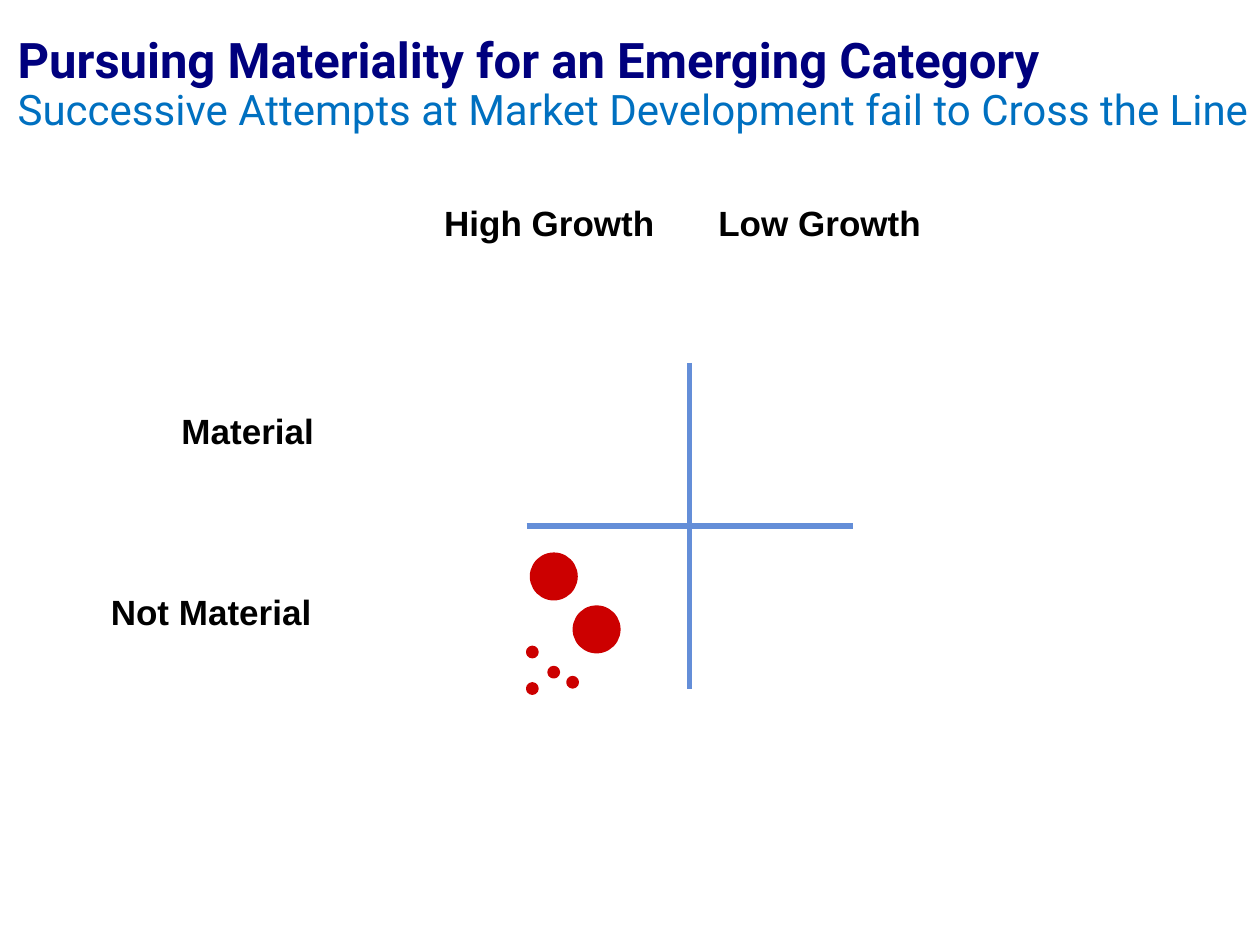
from dataclasses import dataclass

from lxml.etree import SubElement
from pptx import Presentation
from pptx.dml.color import RGBColor
from pptx.enum.shapes import MSO_CONNECTOR, MSO_SHAPE
from pptx.enum.text import MSO_ANCHOR, MSO_AUTO_SIZE, PP_ALIGN
from pptx.oxml.ns import qn
from pptx.util import Inches, Pt


@dataclass(frozen=True)
class Theme:
    title_font: str = "Roboto"
    label_font: str = "Arial"
    title: RGBColor = RGBColor(0x00, 0x00, 0x7E)
    subtitle: RGBColor = RGBColor(0x00, 0x70, 0xC0)
    label: RGBColor = RGBColor(0x00, 0x00, 0x00)
    axis: RGBColor = RGBColor(0x64, 0x8E, 0xD8)
    bubble: RGBColor = RGBColor(0xCC, 0x00, 0x00)
    title_size: Pt = Pt(28)
    subtitle_size: Pt = Pt(24)
    label_size: Pt = Pt(20)
    axis_width: Pt = Pt(3)
    bubble_line: Pt = Pt(2.25)


THEME = Theme()


def format_run(r, font, size, color, bold):
    r.font.name = font
    r.font.size = size
    r.font.color.rgb = color
    r.font.bold = bold


def add_heading(s, left, top, width, height, title, subtitle):
    sp = s.shapes.title
    sp.left, sp.top, sp.width, sp.height = map(Inches, (left, top, width, height))
    tf = sp.text_frame
    tf.word_wrap = True
    tf.auto_size = MSO_AUTO_SIZE.NONE
    tf.vertical_anchor = MSO_ANCHOR.TOP
    p = tf.paragraphs[0]
    p.text = f"{title}\v{subtitle}"
    p.alignment = PP_ALIGN.LEFT
    p.line_spacing = 0.9
    first, second = p.runs
    format_run(first, THEME.title_font, THEME.title_size, THEME.title, True)
    format_run(second, THEME.title_font, THEME.subtitle_size, THEME.subtitle, False)


def add_label(s, text, left, top, width, align):
    sp = s.shapes.add_textbox(Inches(left), Inches(top), Inches(width), Inches(0.44))
    tf = sp.text_frame
    tf.word_wrap = True
    tf.auto_size = MSO_AUTO_SIZE.SHAPE_TO_FIT_TEXT
    p = tf.paragraphs[0]
    p.text = text
    p.alignment = align
    format_run(p.runs[0], THEME.label_font, THEME.label_size, THEME.label, True)


def add_axis(s, x1, y1, x2, y2):
    line = s.shapes.add_connector(MSO_CONNECTOR.STRAIGHT, *map(Inches, (x1, y1, x2, y2)))
    line.line.color.rgb = THEME.axis
    line.line.width = THEME.axis_width
    SubElement(line._element.spPr, qn("a:effectLst"))


def add_bubble(s, left, top, size):
    sp = s.shapes.add_shape(MSO_SHAPE.OVAL, *map(Inches, (left, top, size, size)))
    sp.shadow.inherit = False
    sp.fill.solid()
    sp.fill.fore_color.rgb = THEME.bubble
    sp.line.color.rgb = THEME.bubble
    sp.line.width = THEME.bubble_line


def add_quadrants(s, left, top, size, bubbles):
    """Draw the cross and its bubbles, given as (dx, dy, diameter) from the corner."""
    mid = size / 2
    add_axis(s, left + mid, top, left + mid, top + size)
    add_axis(s, left, top + mid, left + size, top + mid)
    for dx, dy, diameter in bubbles:
        add_bubble(s, left + dx, top + dy, diameter)


def main():
    prs = Presentation()
    prs.slide_width, prs.slide_height = Inches(10), Inches(7.5)
    s = prs.slides.add_slide(prs.slide_layouts[5])

    add_heading(s, 0.04, 0.24, 10, 1.08,
                "Pursuing Materiality for an Emerging Category",
                "Successive Attempts at Market Development fail to Cross the Line")

    for text, left, width in (("High Growth", 3.17, 2.38), ("Low Growth", 5.4, 2.21)):
        add_label(s, text, left, 1.55, width, PP_ALIGN.CENTER)

    small, large = 0.07, 0.35
    add_quadrants(s, 4.18, 2.88, 2.59, [
        (0.01, 2.55, small), (0.01, 2.26, small),
        (0.18, 2.42, small), (0.33, 2.5, small),
        (0.04, 1.52, large), (0.38, 1.94, large),
    ])

    for text, left, top, width in (("Material", 0.74, 3.2, 1.85),
                                   ("Not Material", 0.75, 4.64, 1.82)):
        add_label(s, text, left, top, width, PP_ALIGN.RIGHT)

    prs.save("out.pptx")


if __name__ == "__main__":
    main()
